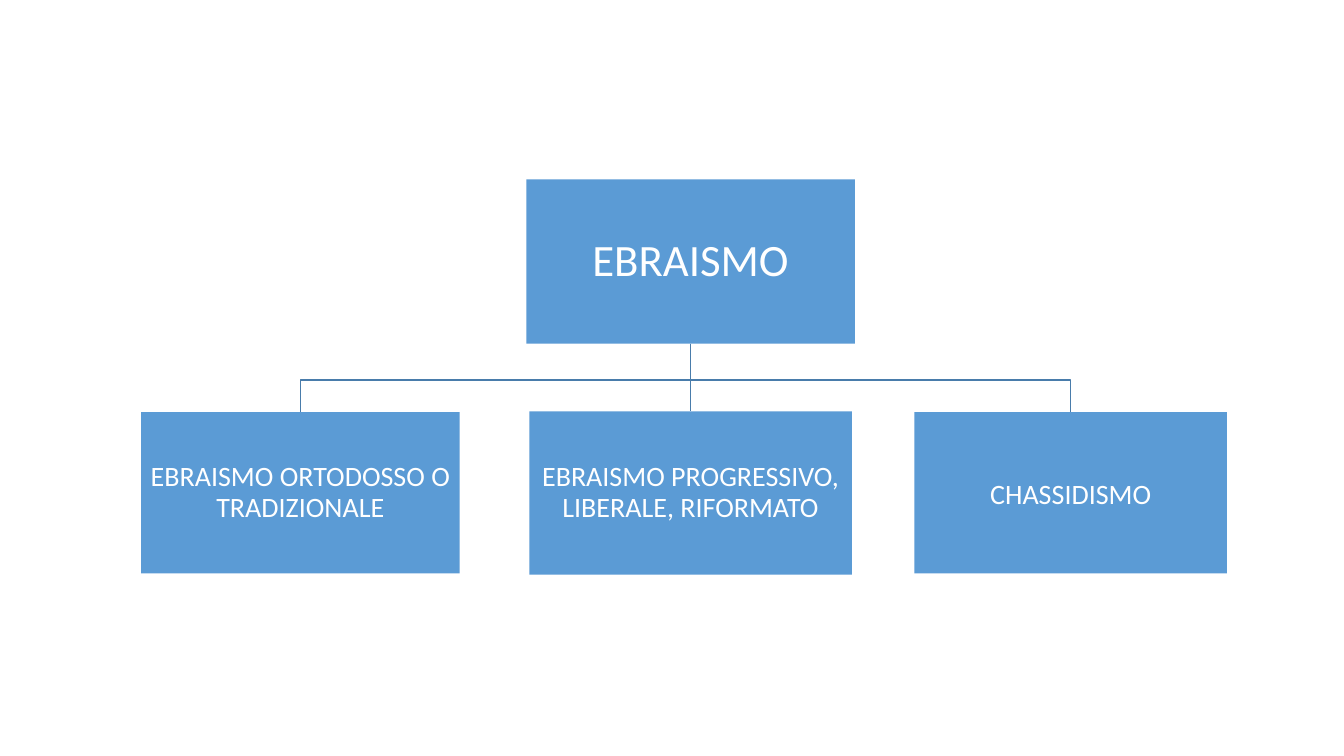
from dataclasses import dataclass

from lxml import etree
from pptx import Presentation
from pptx.dml.color import RGBColor
from pptx.enum.shapes import MSO_CONNECTOR, MSO_SHAPE
from pptx.enum.text import MSO_ANCHOR, PP_ALIGN
from pptx.oxml.ns import qn
from pptx.shapes.autoshape import Shape
from pptx.slide import Slide
from pptx.util import Inches, Pt

BOX_BLUE = RGBColor(0x5B, 0x9B, 0xD5)
LINE_BLUE = RGBColor(0x49, 0x7C, 0xAB)
WHITE = RGBColor(0xFF, 0xFF, 0xFF)
RECTANGLE = MSO_SHAPE.RECTANGLE
STRAIGHT = MSO_CONNECTOR.STRAIGHT
CENTER = PP_ALIGN.CENTER
MIDDLE = MSO_ANCHOR.MIDDLE

BLANK_LAYOUT = 6
TOP_SIDE, BOTTOM_SIDE = 0, 2
BRANCH_Y = Inches(3.77)
LINE_WIDTH = Pt(1)


@dataclass(frozen=True)
class Box:
    text: str
    left: float
    top: float
    width: float
    height: float
    size: int = 20
    inset: float = 0.01
    line_spacing: float = 0.9


ROOT = Box("EBRAISMO", 5.22, 1.78, 3.26, 1.63, size=32, inset=0.02)
ORTHODOX = Box("EBRAISMO ORTODOSSO O TRADIZIONALE", 1.4, 4.09, 3.16, 1.6)
PROGRESSIVE = Box("EBRAISMO PROGRESSIVO, LIBERALE, RIFORMATO", 5.25, 4.08, 3.2, 1.62)
HASIDISM = Box("CHASSIDISMO", 9.07, 4.09, 3.1, 1.6, line_spacing=1.0)


def write_text(shape: Shape, text: str, *, size: int, inset: float,
               line_spacing: float) -> None:
    frame = shape.text_frame
    frame.word_wrap = True
    frame.vertical_anchor = MIDDLE
    frame.margin_left = frame.margin_right = Inches(inset)
    frame.margin_top = frame.margin_bottom = Inches(inset)
    paragraph = frame.paragraphs[0]
    paragraph.alignment = CENTER
    paragraph.line_spacing = line_spacing
    run = paragraph.add_run()
    run.text = text
    run.font.name = "Calibri"
    run.font.size = Pt(size)
    run.font.color.rgb = WHITE


def add_box(slide: Slide, box: Box) -> Shape:
    shape = slide.shapes.add_shape(
        RECTANGLE, Inches(box.left), Inches(box.top),
        Inches(box.width), Inches(box.height))
    shape.shadow.inherit = False
    shape.fill.solid()
    shape.fill.fore_color.rgb = BOX_BLUE
    shape.line.fill.background()
    write_text(shape, box.text, size=box.size, inset=box.inset,
               line_spacing=box.line_spacing)
    return shape


def add_straight_link(slide: Slide, parent: Shape, child: Shape) -> None:
    connector = slide.shapes.add_connector(STRAIGHT, 0, 0, 0, 0)
    connector.begin_connect(parent, BOTTOM_SIDE)
    connector.end_connect(child, TOP_SIDE)
    connector.line.color.rgb = LINE_BLUE
    connector.line.width = LINE_WIDTH
    properties = connector._element.spPr
    etree.SubElement(properties, qn("a:effectLst"))


def add_bent_link(slide: Slide, parent: Shape, child: Shape) -> None:
    """Draw a line that goes down, sideways and down to the child."""
    start_x = parent.left + parent.width // 2
    end_x = child.left + child.width // 2
    builder = slide.shapes.build_freeform(start_x, parent.top + parent.height)
    builder.add_line_segments(
        [(start_x, BRANCH_Y), (end_x, BRANCH_Y), (end_x, child.top)],
        close=False)
    link = builder.convert_to_shape()
    link.shadow.inherit = False
    link.fill.background()
    link.line.color.rgb = LINE_BLUE
    link.line.width = LINE_WIDTH


def main() -> None:
    presentation = Presentation()
    presentation.slide_width = Inches(13.33)
    presentation.slide_height = Inches(7.5)
    slide = presentation.slides.add_slide(presentation.slide_layouts[BLANK_LAYOUT])

    root = add_box(slide, ROOT)
    orthodox, progressive, hasidism = [
        add_box(slide, box) for box in (ORTHODOX, PROGRESSIVE, HASIDISM)]
    add_straight_link(slide, root, progressive)
    for branch in (orthodox, hasidism):
        add_bent_link(slide, root, branch)

    presentation.save("out.pptx")


if __name__ == "__main__":
    main()
